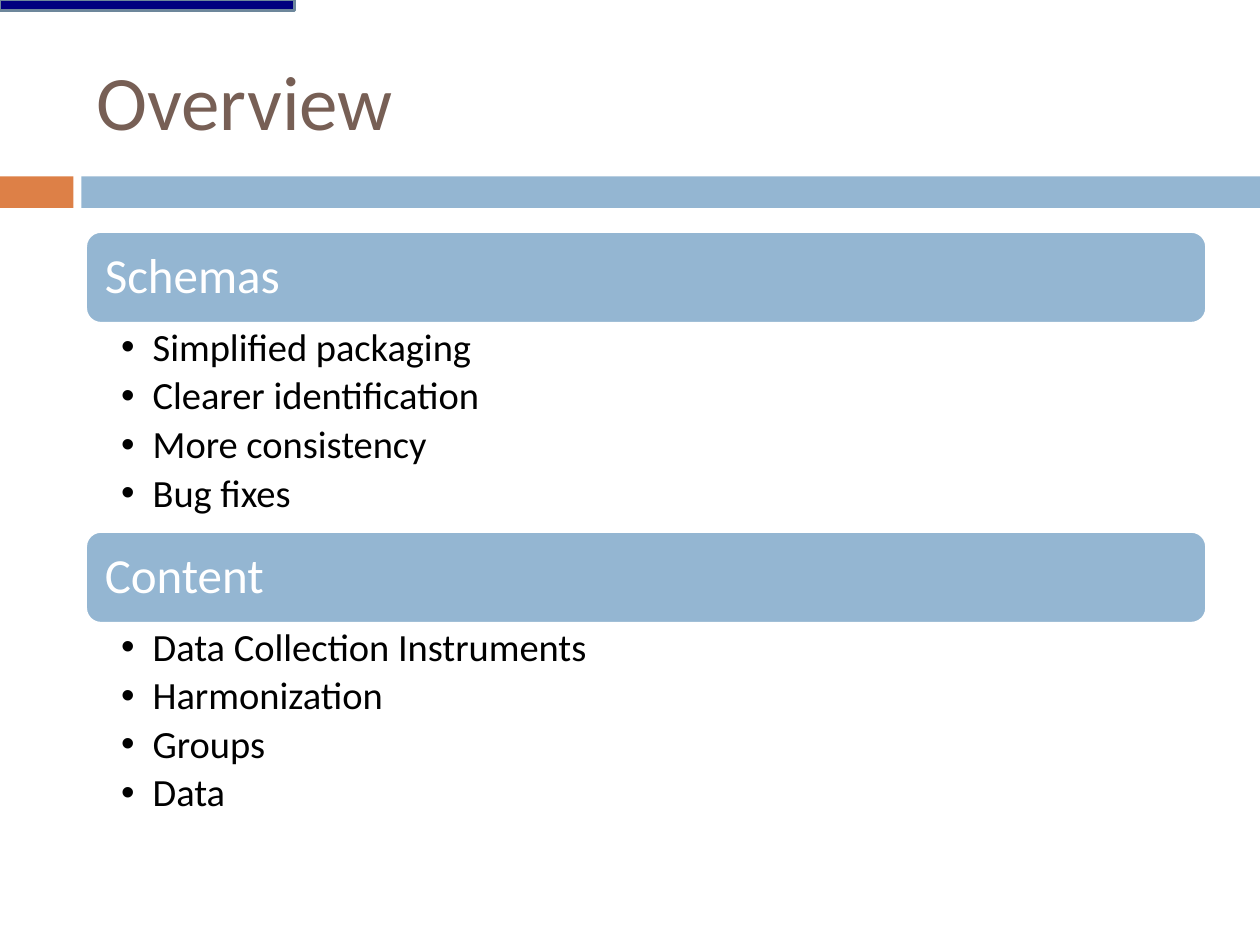
from dataclasses import dataclass

from lxml.etree import SubElement
from pptx import Presentation
from pptx.dml.color import RGBColor as RGB
from pptx.enum.shapes import MSO_SHAPE as Preset
from pptx.enum.text import MSO_ANCHOR as Anchor, MSO_AUTO_SIZE as AutoSize, PP_ALIGN as Align
from pptx.oxml.ns import qn
from pptx.util import Pt


@dataclass(frozen=True)
class Theme:
    font: str = "Calibri"
    title_size: float = 44
    heading_size: float = 28
    item_size: float = 22
    brown: RGB = RGB(0x77, 0x5F, 0x55)
    orange: RGB = RGB(0xDD, 0x80, 0x47)
    blue: RGB = RGB(0x94, 0xB6, 0xD2)
    navy: RGB = RGB(0x00, 0x00, 0x7F)
    slate: RGB = RGB(0x6D, 0x87, 0x9B)
    white: RGB = RGB(0xFF, 0xFF, 0xFF)
    black: RGB = RGB(0x00, 0x00, 0x00)


@dataclass(frozen=True)
class Box:
    left: float
    top: float
    width: float
    height: float

    def in_points(self) -> list:
        return [Pt(v) for v in (self.left, self.top, self.width, self.height)]


@dataclass(frozen=True)
class Section:
    heading: str
    items: tuple


THEME = Theme()
SLIDE_WIDTH, SLIDE_HEIGHT = 720, 540
CONTENT_LEFT, CONTENT_WIDTH = 48.96, 640.5
SECTIONS_TOP, HEADING_HEIGHT, LIST_HEIGHT = 132.3, 52.4, 119
BULLET_INDENT = 18

SECTIONS = (
    Section("Schemas", ("Simplified packaging", "Clearer identification",
                        "More consistency", "Bug fixes")),
    Section("Content", ("Data Collection Instruments", "Harmonization",
                        "Groups", "Data")),
)


def apply(target, values: dict) -> None:
    for name, value in values.items():
        setattr(target, name, value)


def format_frame(frame, anchor, left: float, top: float, right: float, bottom: float) -> None:
    apply(frame, {"word_wrap": True, "auto_size": AutoSize.NONE, "vertical_anchor": anchor,
                  "margin_left": Pt(left), "margin_top": Pt(top),
                  "margin_right": Pt(right), "margin_bottom": Pt(bottom)})


def write(paragraph, text: str, size: float, color: RGB, line_spacing: float = 1,
          space_after: float = 0) -> None:
    apply(paragraph, {"alignment": Align.LEFT, "line_spacing": line_spacing,
                      "space_before": Pt(0), "space_after": Pt(space_after)})
    run = paragraph.add_run()
    run.text = text
    apply(run.font, {"name": THEME.font, "size": Pt(size)})
    run.font.color.rgb = color


def add_bullet(paragraph) -> None:
    properties = paragraph._p.get_or_add_pPr()
    properties.set("marL", str(Pt(BULLET_INDENT)))
    properties.set("indent", str(-Pt(BULLET_INDENT)))
    SubElement(properties, qn("a:buFont"), typeface="Arial")
    SubElement(properties, qn("a:buChar"), char="•")


def place(placeholder, box: Box) -> None:
    apply(placeholder, dict(zip(("left", "top", "width", "height"), box.in_points())))


def add_block(slide, preset, box: Box, fill: RGB, outline: RGB | None = None):
    block = slide.shapes.add_shape(preset, *box.in_points())
    block.shadow.inherit = False
    block.fill.solid()
    block.fill.fore_color.rgb = fill
    if outline is None:
        block.line.fill.background()
    else:
        block.line.color.rgb = outline
        block.line.width = Pt(1.5)
    return block


def add_section(slide, section: Section, list_holder, top: float) -> None:
    heading = add_block(slide, Preset.ROUNDED_RECTANGLE,
                        Box(CONTENT_LEFT, top, CONTENT_WIDTH, HEADING_HEIGHT),
                        THEME.blue, THEME.white)
    format_frame(heading.text_frame, Anchor.MIDDLE, 8.4, 6, 8.4, 6)
    write(heading.text_frame.paragraphs[0], section.heading,
          THEME.heading_size, THEME.white, 0.9)

    place(list_holder, Box(CONTENT_LEFT, top + HEADING_HEIGHT, CONTENT_WIDTH, LIST_HEIGHT))
    frame = list_holder.text_frame
    format_frame(frame, Anchor.TOP, 20.3, 2.8, 15.8, 2.8)
    for index, item in enumerate(section.items):
        paragraph = frame.add_paragraph() if index else frame.paragraphs[0]
        paragraph.level = 1
        write(paragraph, item, THEME.item_size, THEME.black, 0.9, 4)
        add_bullet(paragraph)


def main() -> None:
    deck = Presentation()
    deck.slide_width, deck.slide_height = Pt(SLIDE_WIDTH), Pt(SLIDE_HEIGHT)
    slide = deck.slides.add_slide(deck.slide_layouts.get_by_name("Two Content"))

    add_block(slide, Preset.RECTANGLE, Box(0, 100.8, 42, 18), THEME.orange)
    add_block(slide, Preset.RECTANGLE, Box(46.5, 100.8, SLIDE_WIDTH - 46.5, 18), THEME.blue)

    title, *list_holders = slide.placeholders
    place(title, Box(48, 18, 642, 78))
    format_frame(title.text_frame, Anchor.MIDDLE, 7.2, 3.6, 7.2, 3.6)
    write(title.text_frame.paragraphs[0], "Overview", THEME.title_size, THEME.brown)

    for index, (section, holder) in enumerate(zip(SECTIONS, list_holders)):
        add_section(slide, section, holder,
                    SECTIONS_TOP + index * (HEADING_HEIGHT + LIST_HEIGHT))

    add_block(slide, Preset.RECTANGLE, Box(0, 0, 168.5, 6), THEME.navy, THEME.slate)
    deck.save("out.pptx")


if __name__ == "__main__":
    main()
